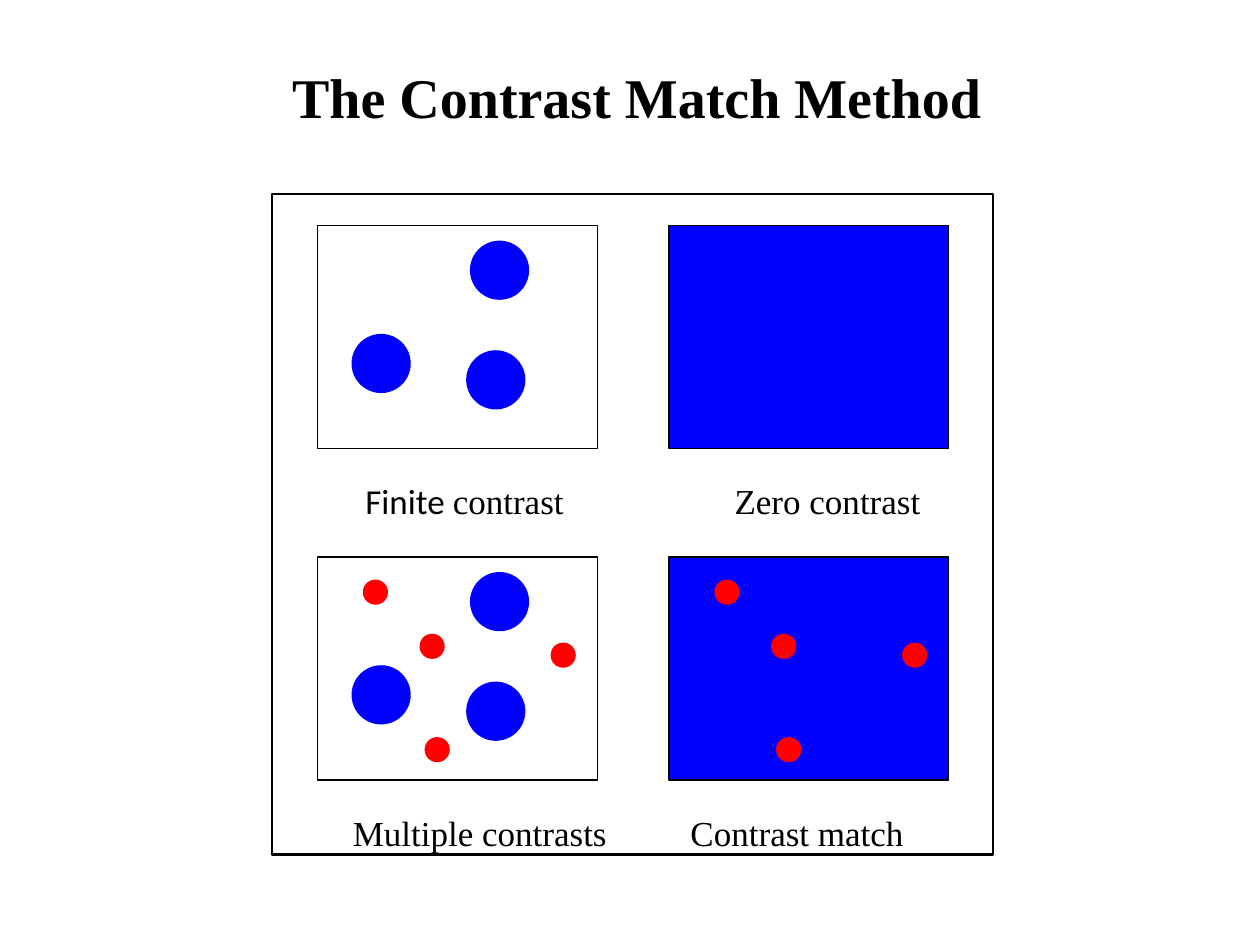
"""Build the slide that explains the contrast match method."""
from pptx import Presentation
from pptx.dml.color import RGBColor
from pptx.enum.shapes import MSO_SHAPE as Shape
from pptx.enum.text import MSO_ANCHOR as Anchor, PP_ALIGN as Align
from pptx.util import Inches, Pt

COLORS = {"black": "000000", "white": "FFFFFF", "blue": "0000FF", "red": "FF0000"}
SERIF, SANS = "Times New Roman", "Calibri"
COLUMNS, ROWS = (2.52, 5.31), (1.79, 4.42)
PANEL_WIDTH, PANEL_HEIGHT = 2.22, 1.77
LARGE_DOTS = ("blue", 0.47, [(0.27, 0.86), (1.21, 0.12), (1.18, 0.99)])
SMALL_DOTS = ("red", 0.2, [(0.36, 0.18), (0.81, 0.61), (0.85, 1.43), (1.85, 0.68)])


def color(name):
    return RGBColor.from_string(COLORS[name])


def add_figure(shapes, kind, left, top, width, height, fill=None, line=None):
    shape = shapes.add_shape(kind, Inches(left), Inches(top), Inches(width), Inches(height))
    shape.shadow.inherit = False
    if fill:
        shape.fill.solid()
        shape.fill.fore_color.rgb = color(fill)
    else:
        shape.fill.background()
    if line:
        shape.line.color.rgb = color("black")
        shape.line.width = Pt(line)
    else:
        shape.line.fill.background()
    return shape


def write_text(shape, runs, size, anchor, bold=False):
    frame = shape.text_frame
    frame.word_wrap = True
    frame.vertical_anchor = anchor
    paragraph = frame.paragraphs[0]
    paragraph.alignment = Align.LEFT
    for text, font_name in runs:
        run = paragraph.add_run()
        run.text = text
        run.font.name = font_name
        run.font.size = Pt(size)
        run.font.bold = bold
        run.font.color.rgb = color("black")


def add_dots(shapes, left, top, dots):
    fill, size, offsets = dots
    for across, down in offsets:
        add_figure(shapes, Shape.OVAL, left + across, top + down, size, size, fill)


def add_caption(shapes, left, top, width, runs):
    caption = add_figure(shapes, Shape.RECTANGLE, left, top, width, 0.33, "white")
    caption.text_frame.margin_left = Inches(0.17)
    write_text(caption, runs, 20, Anchor.TOP)


def add_panel(slide, column, row, fill, dot_sets, caption_left, caption_width, runs):
    shapes = slide.shapes.add_group_shape().shapes
    left, top = COLUMNS[column], ROWS[row]
    add_figure(shapes, Shape.RECTANGLE, left, top, PANEL_WIDTH, PANEL_HEIGHT, fill, 0.75)
    for dots in dot_sets:
        add_dots(shapes, left, top, dots)
    add_caption(shapes, caption_left, top + 1.97, caption_width, runs)


def add_title(slide, text):
    title = slide.shapes.add_textbox(Inches(2.22), Inches(0.44), Inches(5.84), Inches(0.64))
    write_text(title, [(text, SERIF)], 32, Anchor.MIDDLE, bold=True)


def main():
    presentation = Presentation()
    presentation.slide_width, presentation.slide_height = Inches(10), Inches(7.5)
    slide = presentation.slides.add_slide(presentation.slide_layouts[6])
    panels = [
        (1, 0, "blue", [], 5.66, 1.88, [("Zero contrast", SERIF)]),
        (0, 1, None, [LARGE_DOTS, SMALL_DOTS], 2.63, 2.35, [("Multiple contrasts", SERIF)]),
        (1, 1, "blue", [SMALL_DOTS], 5.31, 2.22, [("Contrast match", SERIF)]),
        (0, 0, None, [LARGE_DOTS], 2.73, 2, [("Finite ", SANS), ("contrast", SERIF)]),
    ]
    for panel in panels:
        add_panel(slide, *panel)
    add_figure(slide.shapes, Shape.RECTANGLE, 2.16, 1.54, 5.72, 5.24, line=1.5)
    add_title(slide, "The Contrast Match Method")
    presentation.save("out.pptx")


if __name__ == "__main__":
    main()
